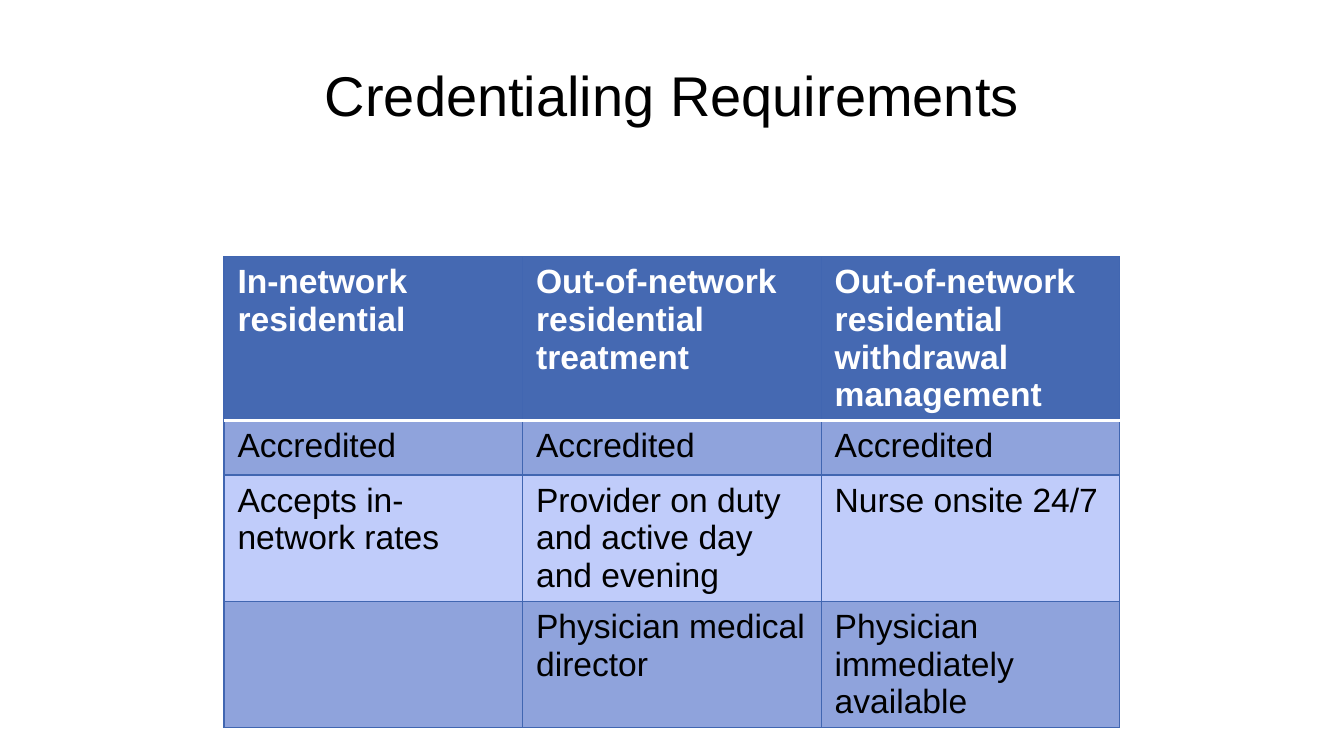
"""Build the credentialing requirements slide with its comparison table."""
from lxml.etree import SubElement
from pptx import Presentation
from pptx.dml.color import RGBColor
from pptx.enum.text import MSO_ANCHOR, PP_ALIGN
from pptx.oxml.ns import qn
from pptx.util import Cm, Pt

TITLE = "Credentialing Requirements"
REQUIREMENTS = [
    ("In-network residential", "Out-of-network residential treatment",
     "Out-of-network residential withdrawal management"),
    ("Accredited", "Accredited", "Accredited"),
    ("Accepts in-network rates", "Provider on duty and active day and evening",
     "Nurse onsite 24/7"),
    ("", "Physician medical director", "Physician immediately available"),
]
FONT = "Arial"
BLACK, WHITE = "000000", "FFFFFF"
HEADER_FILL, BAND_FILLS = "4569B2", ("C0CCFA", "8FA3DC")
GRID_LINE = (BLUE_LINE, LINE_WIDTH) = ("4166B1", 0.75)
HEADER_RULE = (WHITE, 2)
SLIDE_WIDTH, SLIDE_HEIGHT = 25.4, 14.29
TABLE_WIDTH, TABLE_TOP, ROW_HEIGHT = 16.93, 4.85, 1.03


def color(hex_code):
    return RGBColor.from_string(hex_code)


def add_text(paragraph, text, size, hex_code, bold=False):
    run = paragraph.add_run()
    run.text = text
    run.font.name = FONT
    run.font.size = Pt(size)
    run.font.bold = bold
    run.font.color.rgb = color(hex_code)


def add_border(cell, side, hex_code, width):
    line = SubElement(cell._tc.get_or_add_tcPr(), qn(f"a:ln{side}"), w=str(Pt(width)))
    fill = SubElement(line, qn("a:solidFill"))
    SubElement(fill, qn("a:srgbClr"), val=hex_code)


def add_title(slide):
    title = slide.shapes.title
    title.left, title.top = Cm(0), Cm(0.74)
    title.width, title.height = Cm(SLIDE_WIDTH), Cm(2.24)
    frame = title.text_frame
    frame.word_wrap = True
    frame.vertical_anchor = MSO_ANCHOR.MIDDLE
    frame.margin_left = frame.margin_right = Cm(0.13)
    frame.margin_top = frame.margin_bottom = Cm(0.13)
    heading = frame.paragraphs[0]
    heading.alignment = PP_ALIGN.CENTER
    heading.line_spacing = 0.9
    add_text(heading, TITLE, 30, BLACK)


def add_requirements(slide):
    row_count, column_count = len(REQUIREMENTS), len(REQUIREMENTS[0])
    table = slide.shapes.add_table(
        row_count, column_count, Cm((SLIDE_WIDTH - TABLE_WIDTH) / 2), Cm(TABLE_TOP),
        Cm(TABLE_WIDTH), Cm(ROW_HEIGHT * row_count)).table
    for row, requirements in enumerate(REQUIREMENTS):
        is_header = row == 0
        for column, requirement in enumerate(requirements):
            cell = table.cell(row, column)
            borders = {
                "L": GRID_LINE,
                "R": GRID_LINE,
                "T": HEADER_RULE if row == 1 else GRID_LINE,
                "B": HEADER_RULE if is_header else GRID_LINE,
            }
            for side, border in borders.items():
                add_border(cell, side, *border)
            cell.fill.solid()
            cell.fill.fore_color.rgb = color(HEADER_FILL if is_header else BAND_FILLS[row % 2])
            if requirement:
                add_text(cell.text_frame.paragraphs[0], requirement, 18,
                         WHITE if is_header else BLACK, is_header)


def main():
    presentation = Presentation()
    presentation.slide_width = Cm(SLIDE_WIDTH)
    presentation.slide_height = Cm(SLIDE_HEIGHT)
    slide = presentation.slides.add_slide(presentation.slide_layouts[5])
    add_title(slide)
    add_requirements(slide)
    presentation.save("out.pptx")


if __name__ == "__main__":
    main()
